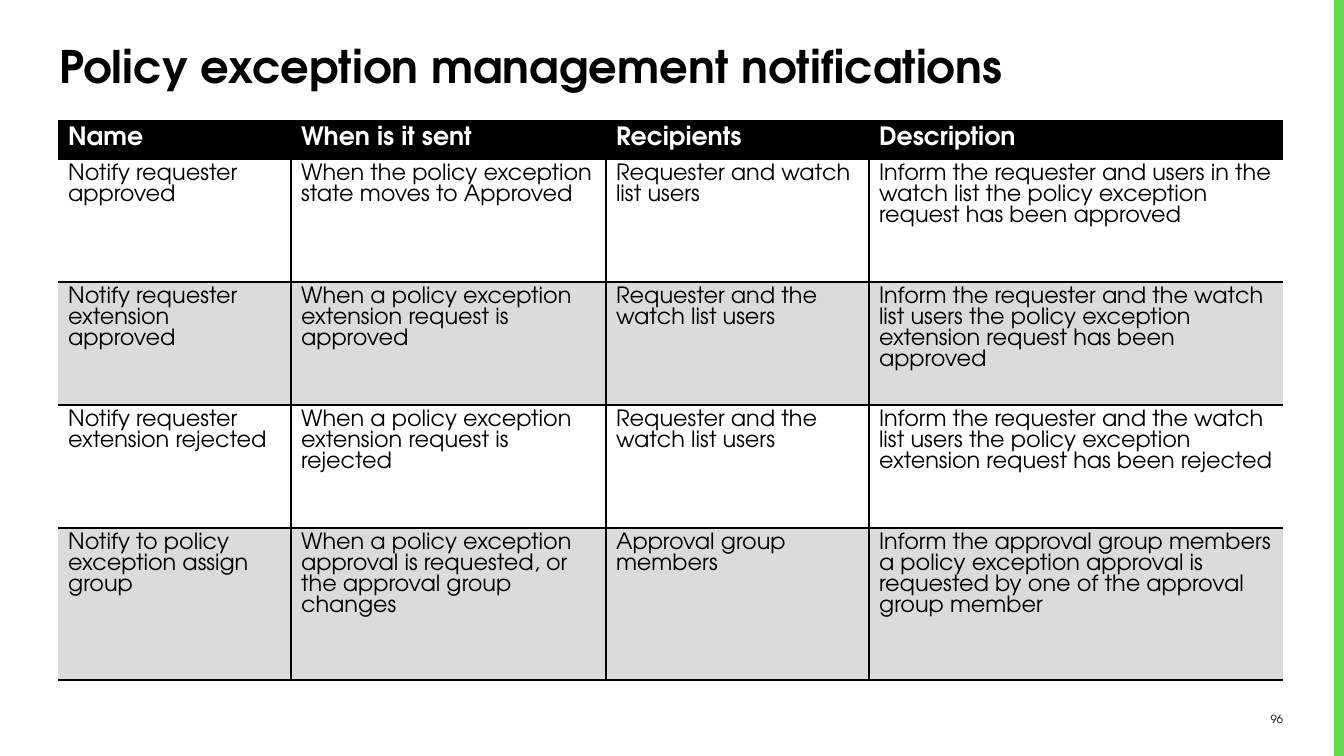
from dataclasses import dataclass

import lxml.etree
import pptx
import pptx.dml.color
import pptx.enum.shapes
import pptx.enum.text
import pptx.oxml.ns
import pptx.util

EMU_PER_PX = 914400 / 100.8
FONT = "TeX Gyre Adventor"
BLACK, WHITE, GREY, GREEN = "000000", "FFFFFF", "DBDBDB", "62D84E"


@dataclass(frozen=True)
class Box:
    left: int
    top: int
    width: int
    height: int

    def emu(self) -> tuple[int, ...]:
        return tuple(map(px, (self.left, self.top, self.width, self.height)))


@dataclass(frozen=True)
class Style:
    size: int
    color: str = BLACK
    bold: bool = False
    line_pt: int | None = None


@dataclass(frozen=True)
class Notification:
    name: str
    when_sent: str
    recipients: str
    description: str
    height: int = 123

    def texts(self) -> tuple[str, ...]:
        return self.name, self.when_sent, self.recipients, self.description


TITLE_STYLE = Style(32, bold=True)
HEADER_STYLE = Style(18, WHITE, True, 17)
BODY_STYLE = Style(16, line_pt=15)
NUMBER_STYLE = Style(8)

COLUMN_WIDTHS = (233, 315, 263, 414)
ROWS = (
    Notification("Name", "When is it sent", "Recipients", "Description", 38),
    Notification(
        "Notify requester approved",
        "When the policy exception state moves to Approved",
        "Requester and watch list users",
        "Inform the requester and users in the watch list the policy exception request has been approved",
    ),
    Notification(
        "Notify requester extension approved",
        "When a policy exception extension request is approved",
        "Requester and the watch list users",
        "Inform the requester and the watch list users the policy exception extension request has been approved",
    ),
    Notification(
        "Notify requester extension rejected",
        "When a policy exception extension request is rejected",
        "Requester and the watch list users",
        "Inform the requester and the watch list users the policy exception extension request has been rejected",
    ),
    Notification(
        "Notify to policy exception assign group",
        "When a policy exception approval is requested, or the approval group changes",
        "Approval group members",
        "Inform the approval group members a policy exception approval is requested by one of the approval group member",
        152,
    ),
)


def px(length: int) -> int:
    return round(length * EMU_PER_PX)


def rgb(color: str) -> pptx.dml.color.RGBColor:
    return pptx.dml.color.RGBColor.from_string(color)


def write(frame, text: str, style: Style, align=pptx.enum.text.PP_ALIGN.LEFT) -> None:
    frame.word_wrap = True
    paragraph = frame.paragraphs[0]
    paragraph.alignment = align
    if style.line_pt:
        paragraph.line_spacing = pptx.util.Pt(style.line_pt)
    run = paragraph.add_run()
    run.text = text
    run.font.name = FONT
    run.font.size = pptx.util.Pt(style.size)
    run.font.bold = style.bold
    run.font.color.rgb = rgb(style.color)


def set_borders(cell, hidden: set[str]) -> None:
    qn = pptx.oxml.ns.qn
    properties = cell._tc.get_or_add_tcPr()
    for side in "LRTB":
        line = lxml.etree.SubElement(properties, qn(f"a:ln{side}"), w=str(pptx.util.Pt(1)))
        if side in hidden:
            lxml.etree.SubElement(line, qn("a:noFill"))
        else:
            fill = lxml.etree.SubElement(line, qn("a:solidFill"))
            lxml.etree.SubElement(fill, qn("a:srgbClr"), val=BLACK)


def add_title(slide, text: str, box: Box) -> None:
    title = slide.shapes.title
    title.left, title.top, title.width, title.height = box.emu()
    title.text_frame.auto_size = pptx.enum.text.MSO_AUTO_SIZE.NONE
    title.text_frame.vertical_anchor = pptx.enum.text.MSO_ANCHOR.TOP
    write(title.text_frame, text, TITLE_STYLE)


def add_edge_bar(slide, box: Box) -> None:
    bar = slide.shapes.add_shape(pptx.enum.shapes.MSO_SHAPE.RECTANGLE, *box.emu())
    bar.shadow.inherit = False
    bar.fill.solid()
    bar.fill.fore_color.rgb = rgb(GREEN)
    bar.line.fill.background()


def add_page_number(slide, text: str, box: Box) -> None:
    number = slide.shapes.add_textbox(*box.emu())
    number.text_frame.vertical_anchor = pptx.enum.text.MSO_ANCHOR.MIDDLE
    write(number.text_frame, text, NUMBER_STYLE, pptx.enum.text.PP_ALIGN.RIGHT)


def add_notifications(slide, left: int, top: int) -> None:
    box = Box(left, top, sum(COLUMN_WIDTHS), sum(row.height for row in ROWS))
    table = slide.shapes.add_table(len(ROWS), len(COLUMN_WIDTHS), *box.emu()).table
    table.horz_banding = False
    for column, width in zip(table.columns, COLUMN_WIDTHS):
        column.width = px(width)
    last_column = len(COLUMN_WIDTHS) - 1
    for row_index, notification in enumerate(ROWS):
        table.rows[row_index].height = px(notification.height)
        style = BODY_STYLE if row_index else HEADER_STYLE
        background = (GREY if row_index % 2 == 0 else WHITE) if row_index else BLACK
        for column_index, text in enumerate(notification.texts()):
            cell = table.cell(row_index, column_index)
            set_borders(cell, {0: {"L"}, last_column: {"R"}}.get(column_index, set()))
            cell.fill.solid()
            cell.fill.fore_color.rgb = rgb(background)
            write(cell.text_frame, text, style)


def main() -> None:
    deck = pptx.Presentation()
    deck.slide_width, deck.slide_height = px(1344), px(756)
    slide = deck.slides.add_slide(deck.slide_layouts[5])
    add_page_number(slide, "96", Box(1219, 707, 74, 25))
    add_edge_bar(slide, Box(1334, 0, 10, 756))
    add_title(slide, "Policy exception management notifications", Box(49, 34, 1234, 132))
    add_notifications(slide, 58, 121)
    deck.save("out.pptx")


if __name__ == "__main__":
    main()
